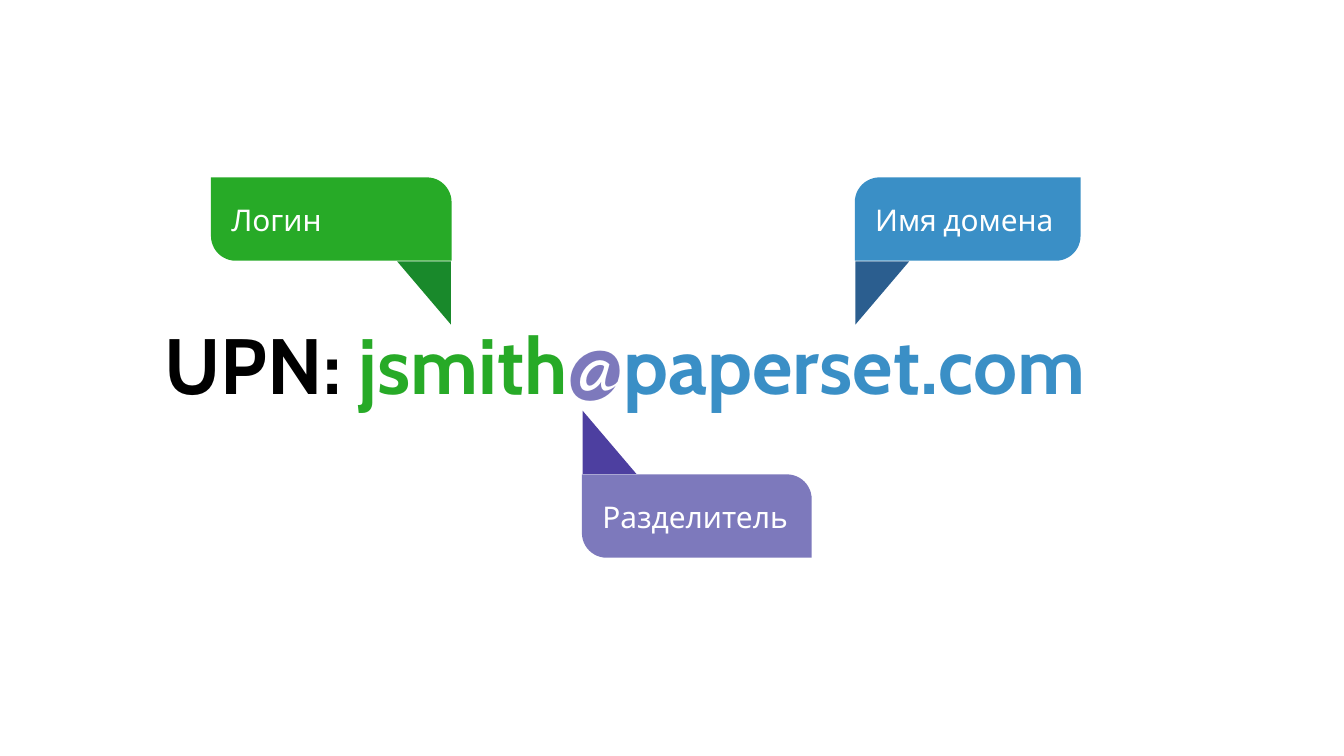
"""Build a slide that names the three parts of a UPN."""
from pptx import Presentation
from pptx.dml.color import RGBColor
from pptx.enum.shapes import MSO_SHAPE
from pptx.enum.text import MSO_ANCHOR, MSO_AUTO_SIZE, PP_ALIGN
from pptx.oxml.ns import qn
from pptx.util import Inches, Pt

LABEL = MSO_SHAPE.ROUND_2_DIAG_RECTANGLE
TAIL = MSO_SHAPE.RIGHT_TRIANGLE
LEFT, CENTER = PP_ALIGN.LEFT, PP_ALIGN.CENTER
TOP, MIDDLE = MSO_ANCHOR.TOP, MSO_ANCHOR.MIDDLE
NO_FIT = MSO_AUTO_SIZE.NONE
FONT = "Cabin"
COLORS = {
    "black": "000000", "white": "FFFFFF",
    "green": "27AA27", "forest": "19892B",
    "blue": "3A8FC6", "navy": "2B5E8F",
    "lilac": "7D79BC", "violet": "4D3FA0",
}
LABEL_H, TAIL_W, TAIL_H = 0.62, 0.47, 0.4


def rgb(name):
    """Return the named colour."""
    return RGBColor.from_string(COLORS[name])


def add_run(para, text, size, color, bold=False):
    """Append one formatted run."""
    run = para.add_run()
    run.text = text
    font = run.font
    font.name, font.size, font.bold = FONT, Pt(size), bold
    font.color.rgb = rgb(color)


def set_frame(frame, inset, anchor, align):
    """Set margins, anchor and alignment, and return the first paragraph."""
    frame.margin_left = frame.margin_right = Inches(inset)
    frame.margin_top = frame.margin_bottom = Inches(inset)
    frame.word_wrap = True
    frame.auto_size = NO_FIT
    frame.vertical_anchor = anchor
    para = frame.paragraphs[0]
    para.alignment = align
    return para


def add_shape(group, kind, box, color, flip=False, turn=0):
    """Add a plain filled shape to a group."""
    shape = group.shapes.add_shape(kind, *map(Inches, box))
    shape.shadow.inherit = False
    shape.fill.solid()
    shape.fill.fore_color.rgb = rgb(color)
    shape.line.fill.background()
    shape.rotation = turn
    if flip:
        shape.element.spPr.get_or_add_xfrm().set("flipH", "1")
    return shape


def add_callout(slide, text, box, tail, colors, flips, turn):
    """Add a label with its folded tail as one group."""
    group = slide.shapes.add_group_shape()
    label = add_shape(group, LABEL, (*box, LABEL_H), colors[0], flips[0])
    label.adjustments[0], label.adjustments[1] = 0.297, 0
    para = set_frame(label.text_frame, 0.1, MIDDLE, LEFT)
    add_run(para, text, 16, "white")
    add_shape(group, TAIL, (*tail, TAIL_W, TAIL_H), colors[1], flips[1], turn)


def add_upn(slide, box, parts):
    """Write the address into the body placeholder."""
    body = slide.placeholders[1]
    body.left, body.top, body.width, body.height = map(Inches, box)
    para = set_frame(body.text_frame, 0, TOP, CENTER)
    props = para._p.get_or_add_pPr()
    props.set("marL", "0")
    props.set("indent", "0")
    props.append(props.makeelement(qn("a:buNone"), {}))
    para.space_before = Pt(0)
    for text, color in parts:
        add_run(para, text, 42, color, True)


def main():
    """Build and save the slide."""
    deck = Presentation()
    deck.slide_width = Inches(10)
    deck.slide_height = deck.slide_width * 9 // 16
    slide = deck.slides.add_slide(deck.slide_layouts[1])
    title = slide.shapes.title.element
    title.getparent().remove(title)

    add_upn(slide, (0.72, 2.35, 7.86, 0.93), [
        ("UPN:", "black"), (" jsmith", "green"),
        ("@", "lilac"), ("paperset.com", "blue"),
    ])
    for call in [
        ("Логин", (1.57, 1.32, 1.79), (2.92, 1.98),
         ("green", "forest"), (True, True), 270),
        ("Имя домена", (6.36, 1.32, 1.68), (6.33, 1.98),
         ("blue", "navy"), (False, False), 90),
        ("Разделитель", (4.33, 3.53, 1.71), (4.3, 3.09),
         ("lilac", "violet"), (True, True), 90),
    ]:
        add_callout(slide, *call)
    deck.save("out.pptx")


if __name__ == "__main__":
    main()
